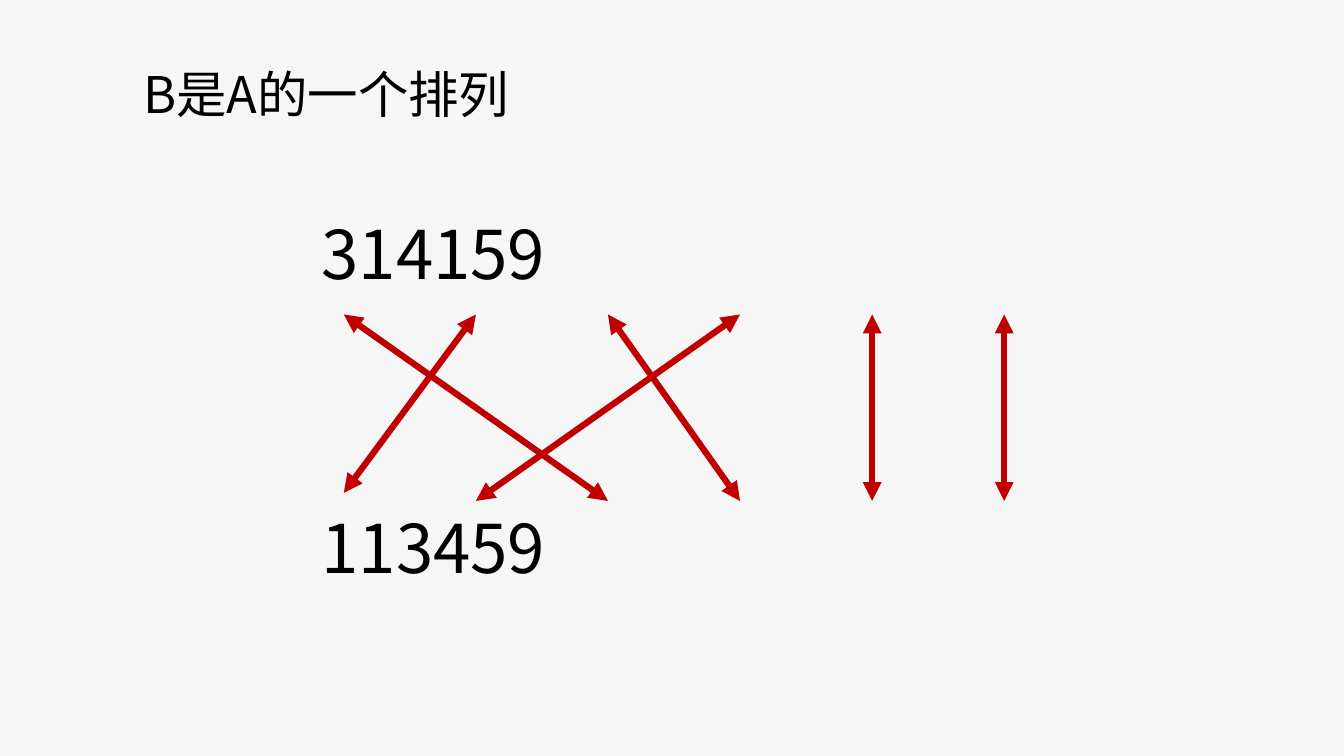
from dataclasses import dataclass

from lxml.etree import SubElement
from pptx import Presentation
from pptx.dml.color import RGBColor
from pptx.enum.shapes import MSO_CONNECTOR
from pptx.enum.text import MSO_ANCHOR, MSO_AUTO_SIZE, PP_ALIGN
from pptx.oxml.ns import qn
from pptx.slide import Slide
from pptx.util import Inches, Pt


@dataclass(frozen=True)
class Theme:
    background: RGBColor = RGBColor(0xF6, 0xF6, 0xF6)
    text: RGBColor = RGBColor(0, 0, 0)
    arrow: RGBColor = RGBColor(0xC0, 0, 0)
    font: str = "Noto Sans CJK SC"
    title_size: int = 36
    number_size: int = 48
    arrow_width: float = 4.5


@dataclass(frozen=True)
class Grid:
    """One column per digit; two rows where the arrows end."""

    first_column: float = 3.41
    column_step: float = 1.31
    upper_row: float = 3.12
    lower_row: float = 4.97

    def column(self, index: int) -> float:
        return self.first_column + index * self.column_step


@dataclass(frozen=True)
class TextBlock:
    text: str
    left: float
    top: float
    width: float
    height: float
    size: int
    is_title: bool = False


@dataclass(frozen=True)
class DigitMatch:
    upper_column: int
    lower_column: int
    lower_shift: float = 0


THEME = Theme()
GRID = Grid()

TEXT_BLOCKS = [
    TextBlock("B是A的一个排列", 1.32, 0.46, 12.25, 1, THEME.title_size, True),
    TextBlock("314159", 3.09, 2.06, 7.16, 0.91, THEME.number_size),
    TextBlock("113459", 3.09, GRID.lower_row, 7.16, 0.91, THEME.number_size),
]

DIGIT_MATCHES = [
    DigitMatch(0, 2),
    DigitMatch(1, 0, -0.08),
    DigitMatch(2, 3),
    DigitMatch(3, 1),
    DigitMatch(4, 4),
    DigitMatch(5, 5),
]


def add_text_block(slide: Slide, block: TextBlock) -> None:
    shape = slide.shapes.add_textbox(
        Inches(block.left), Inches(block.top), Inches(block.width), Inches(block.height)
    )
    frame = shape.text_frame
    frame.word_wrap = True
    paragraph = frame.paragraphs[0]
    if block.is_title:
        frame.vertical_anchor = MSO_ANCHOR.MIDDLE
        paragraph.line_spacing = 0.9
        paragraph.space_before = Pt(10)
    else:
        frame.auto_size = MSO_AUTO_SIZE.SHAPE_TO_FIT_TEXT
        paragraph.alignment = PP_ALIGN.JUSTIFY

    run = paragraph.add_run()
    run.text = block.text
    run.font.size = Pt(block.size)
    run.font.color.rgb = THEME.text
    run.font.name = THEME.font
    SubElement(run.font._element, qn("a:ea"), typeface=THEME.font)


def add_match_arrow(slide: Slide, match: DigitMatch) -> None:
    """Joins a digit above to the same digit below, with a head at each end."""
    connector = slide.shapes.add_connector(
        MSO_CONNECTOR.STRAIGHT,
        Inches(GRID.column(match.upper_column)),
        Inches(GRID.upper_row),
        Inches(GRID.column(match.lower_column)),
        Inches(GRID.lower_row + match.lower_shift),
    )
    connector.line.color.rgb = THEME.arrow
    connector.line.width = Pt(THEME.arrow_width)
    line = connector.line._get_or_add_ln()
    for end in ("a:headEnd", "a:tailEnd"):
        SubElement(line, qn(end), type="triangle")
    SubElement(connector._element.spPr, qn("a:effectLst"))


def main() -> None:
    presentation = Presentation()
    presentation.slide_width = Inches(13.33)
    presentation.slide_height = Inches(7.5)
    slide = presentation.slides.add_slide(presentation.slide_layouts[6])
    background = slide.background.fill
    background.solid()
    background.fore_color.rgb = THEME.background

    for block in TEXT_BLOCKS:
        add_text_block(slide, block)
    for match in DIGIT_MATCHES:
        add_match_arrow(slide, match)
    presentation.save("out.pptx")


if __name__ == "__main__":
    main()
